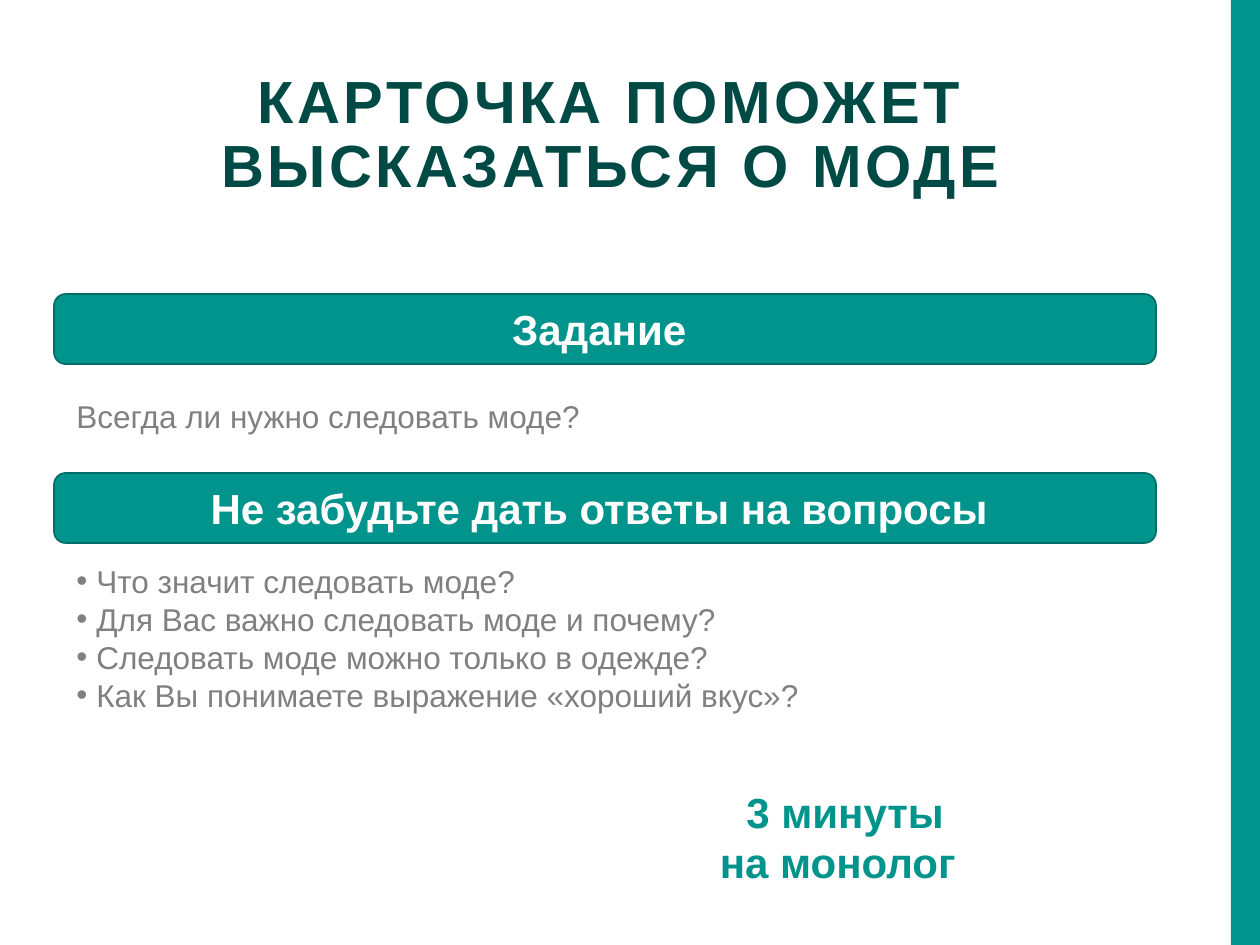
"""Builds a speaking-task card slide about fashion."""
from dataclasses import dataclass

from lxml import etree
from pptx import Presentation
from pptx.dml.color import RGBColor
from pptx.enum.shapes import MSO_SHAPE
from pptx.enum.text import MSO_ANCHOR, PP_ALIGN
from pptx.oxml.ns import qn
from pptx.util import Emu, Pt

PX = 914400 / 126
FONT = "Arial"
COLORS = {
    "teal": "00948C",
    "outline": "006D68",
    "title": "004A46",
    "body": "808080",
    "white": "FFFFFF",
}
RECTANGLE = MSO_SHAPE.RECTANGLE
ROUNDED = MSO_SHAPE.ROUNDED_RECTANGLE
LEFT, CENTER, RIGHT = PP_ALIGN.LEFT, PP_ALIGN.CENTER, PP_ALIGN.RIGHT
TOP, MIDDLE = MSO_ANCHOR.TOP, MSO_ANCHOR.MIDDLE

BAR_LEFT, BAR_WIDTH, BAR_HEIGHT = 54, 1102, 70
BULLET_INDENT = 20


@dataclass(frozen=True)
class Box:
    left: int
    top: int
    width: int
    height: int

    def emu(self) -> tuple[Emu, ...]:
        return tuple(px(v) for v in (self.left, self.top, self.width, self.height))


@dataclass(frozen=True)
class HeaderBar:
    top: int
    text: str


@dataclass(frozen=True)
class TextBlock:
    box: Box
    lines: tuple[str, ...]
    size: int = 18
    color: str = "body"
    bold: bool = False
    align: PP_ALIGN = LEFT
    bulleted: bool = False


TITLE = "КАРТОЧКА ПОМОЖЕТ ВЫСКАЗАТЬСЯ О МОДЕ"
TITLE_BOX = Box(25, 66, 1172, 118)
SIDE_STRIPE = Box(1231, 0, 29, 945)
HEADER_BARS = (
    HeaderBar(294, "Задание "),
    HeaderBar(473, "Не забудьте дать ответы на вопросы "),
)
TEXT_BLOCKS = (
    TextBlock(Box(64, 391, 1000, 51), ("Всегда ли нужно следовать моде?",)),
    TextBlock(
        Box(64, 556, 963, 165),
        (
            "Что значит следовать моде?",
            "Для Вас важно следовать моде и почему?",
            "Следовать моде можно только в одежде?",
            "Как Вы понимаете выражение «хороший вкус»?",
        ),
        bulleted=True,
    ),
    TextBlock(
        Box(640, 780, 328, 115),
        ("3 минуты ", "на монолог"),
        size=24, color="teal", bold=True, align=RIGHT,
    ),
)


def px(value: int) -> Emu:
    return Emu(round(value * PX))


def rgb(name: str) -> RGBColor:
    return RGBColor.from_string(COLORS[name])


def format_paragraph(paragraph, size: int, color: str, bold: bool, align: PP_ALIGN) -> None:
    paragraph.alignment = align
    for run in paragraph.runs:
        run.font.name = FONT
        run.font.size = Pt(size)
        run.font.bold = bold
        run.font.color.rgb = rgb(color)


def add_bullet(paragraph) -> None:
    properties = paragraph._p.get_or_add_pPr()
    properties.set("marL", str(px(BULLET_INDENT)))
    properties.set("indent", str(-px(BULLET_INDENT)))
    etree.SubElement(properties, qn("a:buFont")).set("typeface", FONT)
    etree.SubElement(properties, qn("a:buChar")).set("char", "•")


def add_filled_shape(slide, kind: MSO_SHAPE, box: Box):
    shape = slide.shapes.add_shape(kind, *box.emu())
    shape.shadow.inherit = False
    shape.fill.solid()
    shape.fill.fore_color.rgb = rgb("teal")
    return shape


def set_title(slide) -> None:
    title = slide.shapes.title
    title.left, title.top, title.width, title.height = TITLE_BOX.emu()
    text_frame = title.text_frame
    text_frame.text = TITLE
    text_frame.word_wrap = True
    text_frame.vertical_anchor = TOP
    paragraph = text_frame.paragraphs[0]
    paragraph.line_spacing = 0.9
    format_paragraph(paragraph, 34, "title", True, CENTER)
    paragraph.runs[0].font._element.set("spc", "200")


def add_header_bar(slide, bar: HeaderBar) -> None:
    shape = add_filled_shape(slide, ROUNDED, Box(BAR_LEFT, bar.top, BAR_WIDTH, BAR_HEIGHT))
    shape.line.color.rgb = rgb("outline")
    shape.line.width = Pt(1)
    shape.text_frame.text = bar.text
    shape.text_frame.vertical_anchor = MIDDLE
    format_paragraph(shape.text_frame.paragraphs[0], 24, "white", True, CENTER)


def add_text_block(slide, block: TextBlock) -> None:
    text_frame = slide.shapes.add_textbox(*block.box.emu()).text_frame
    text_frame.word_wrap = True
    text_frame.text = "\n".join(block.lines)
    for paragraph in text_frame.paragraphs:
        format_paragraph(paragraph, block.size, block.color, block.bold, block.align)
        if block.bulleted:
            add_bullet(paragraph)


def main() -> None:
    presentation = Presentation()
    presentation.slide_width, presentation.slide_height = px(1260), px(945)
    slide = presentation.slides.add_slide(presentation.slide_layouts[5])
    set_title(slide)
    add_filled_shape(slide, RECTANGLE, SIDE_STRIPE).line.fill.background()
    for bar in HEADER_BARS:
        add_header_bar(slide, bar)
    for block in TEXT_BLOCKS:
        add_text_block(slide, block)
    presentation.save("out.pptx")


if __name__ == "__main__":
    main()
